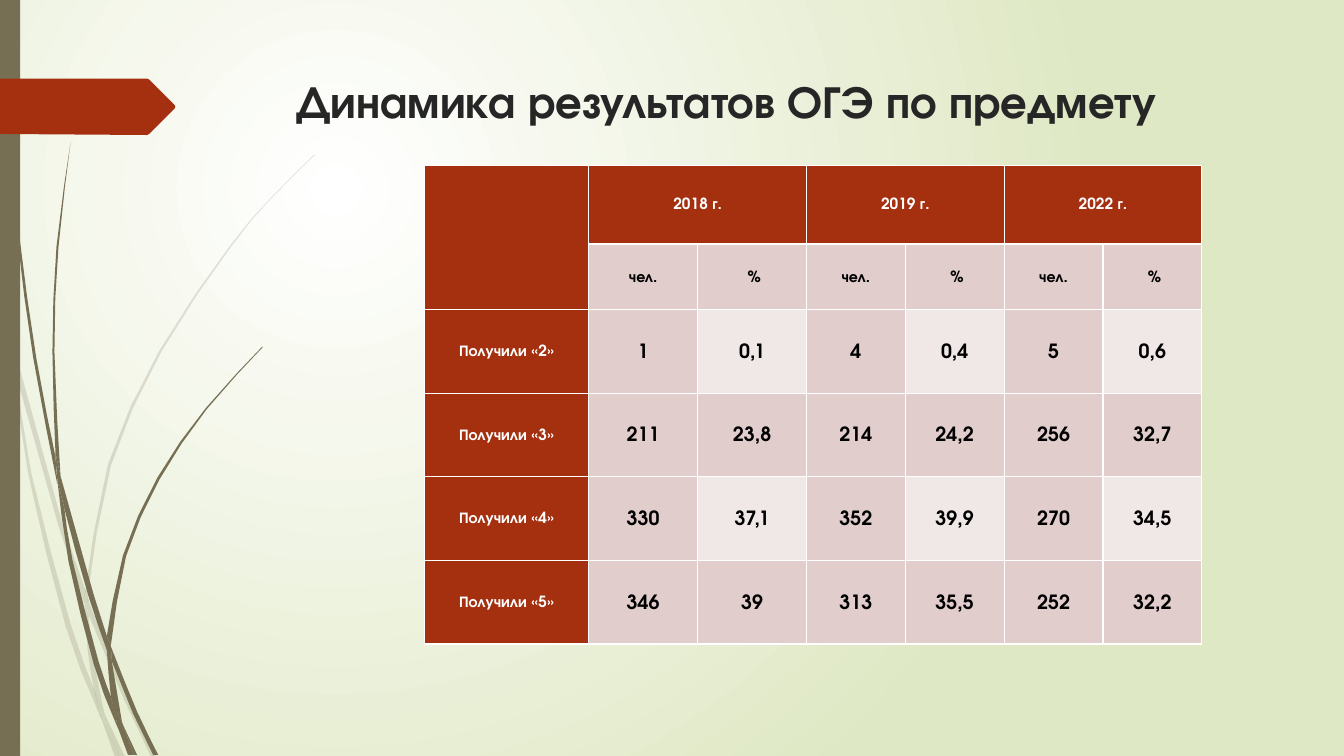
from dataclasses import dataclass

from lxml import etree
from pptx import Presentation
from pptx.dml.color import RGBColor
from pptx.enum.shapes import MSO_SHAPE
from pptx.enum.text import MSO_ANCHOR, PP_ALIGN
from pptx.oxml.ns import qn
from pptx.util import Pt

PX = 9144
SLIDE_WIDTH, SLIDE_HEIGHT = 1333, 750
TITLE_ONLY = 5
RECTANGLE = MSO_SHAPE.RECTANGLE
TOP, MIDDLE = MSO_ANCHOR.TOP, MSO_ANCHOR.MIDDLE
LEFT, CENTER = PP_ALIGN.LEFT, PP_ALIGN.CENTER
CURVE_STEPS = 2
SHORTEST_CURVE = 4


@dataclass(frozen=True)
class Theme:
    """Colours and type sizes of the slide."""
    font: str = "TeX Gyre Adventor"
    title_size: float = 32.4
    label_size: int = 11
    value_size: int = 14
    line_spacing: float = 1.15
    title: str = "262626"
    white: str = "FFFFFF"
    black: str = "000000"
    glow_edge: str = "DFE8C4"
    stem: str = "766F54"
    accent: str = "A53010"
    band: str = "E1CDCC"
    light_band: str = "F0E8E7"


THEME = Theme()

TITLE = "Динамика результатов ОГЭ по предмету"
YEARS = ["2018 г.", "2019 г.", "2022 г."]
MEASURES = ["чел.", " %"]
RESULTS = [
    ["Получили «2»", "1", "0,1", "4", "0,4", "5", "0,6"],
    ["Получили «3»", "211", "23,8", "214", "24,2", "256", "32,7"],
    ["Получили «4»", "330", "37,1", "352", "39,9", "270", "34,5"],
    ["Получили «5»", "346", "39", "313", "35,5", "252", "32,2"],
]
COLUMN_WIDTHS = [163, 108, 108, 98, 98, 98, 98]
ROW_HEIGHTS = [78, 65, 83, 83, 83, 83]

FAINT_BLADES = [
    [[(11, 350), (9, 322), (0, 282)], [(0, 299), (10, 344)]],
    [[(17, 376), (58, 522), (84, 599)], [(85, 586), (62, 520), (14, 345)]],
    [[(88, 610), (123, 694), (150, 751)], [(155, 751), (127, 692), (92, 607), (88, 596)]],
    [[(105, 711), (119, 751)], [(124, 751)]],
    [[(11, 350), (28, 470), (65, 621), (92, 693), (101, 714)],
     [(99, 707), (93, 683), (70, 619), (31, 469), (17, 376)]],
    [[(84, 599), (87, 646), (93, 683), (96, 692), (105, 711)],
     [(103, 706), (91, 646), (88, 610)]],
    [[(88, 596), (88, 584), (110, 462), (160, 349), (229, 245), (268, 198), (312, 154)],
     [(312, 153), (268, 197), (228, 244), (158, 348), (107, 461), (85, 584), (85, 586)]],
    [[(101, 714), (114, 751)], [(119, 751)]],
    [[(84, 599), (88, 608), (88, 610)], [(88, 596), (85, 586)]],
    [[(93, 683), (99, 707), (101, 714), (119, 751)], [(105, 711), (96, 692)]],
]
DARK_BLADES = [
    [[(3, 0), (7, 110), (17, 233), (33, 355), (57, 481)],
     [(55, 453), (36, 355), (19, 232), (8, 109), (4, 0)]],
    [[(60, 472), (64, 505), (88, 592), (106, 645)], [(106, 631), (93, 590)]],
    [[(111, 656), (132, 708), (152, 749)], [(157, 749), (136, 706), (113, 649), (110, 641)]],
    [[(57, 477), (68, 557), (93, 659), (111, 708), (117, 722)],
     [(116, 717), (110, 691), (98, 657), (72, 556), (64, 505)]],
    [[(60, 472), (54, 349), (58, 245), (70, 141)],
     [(70, 141), (56, 245), (52, 349), (55, 449)]],
    [[(122, 719), (133, 749)], [(136, 749)]],
    [[(55, 453), (57, 477), (64, 505)], [(60, 472), (55, 449)]],
    [[(110, 641), (111, 633), (125, 552), (158, 476), (205, 406), (261, 344)],
     [(260, 344), (204, 405), (156, 474), (122, 551), (106, 631)]],
    [[(117, 722), (127, 749)], [(131, 749)]],
    [[(106, 645), (110, 691), (116, 706), (122, 719)], [(121, 716), (111, 656), (109, 651)]],
    [[(106, 645), (109, 651), (111, 656)], [(110, 641), (106, 631)]],
    [[(110, 691), (116, 717), (117, 722), (130, 749)], [(133, 749), (122, 719), (116, 706)]],
]
MARKER = [[(0, 0), (146, 0), (148, 1)], [(173, 26), (174, 28), (173, 30)],
          [(148, 55), (146, 56), (0, 55)]]


def smooth(points):
    """Return points along a Catmull-Rom curve, leaving short edges straight."""
    if len(points) < SHORTEST_CURVE:
        return points
    padded = [points[0], *points, points[-1]]
    curve = [points[0]]
    for a, b, c, d in zip(padded, padded[1:], padded[2:], padded[3:]):
        for step in range(1, CURVE_STEPS + 1):
            t = step / CURVE_STEPS
            curve.append(tuple(
                (2 * q + (r - p) * t + (2 * p - 5 * q + 4 * r - s) * t ** 2
                 + (3 * q - p - 3 * r + s) * t ** 3) / 2
                for p, q, r, s in zip(a, b, c, d)))
    return curve


def paint(shape, color, opacity=100):
    """Give a shape a flat fill without line or shadow."""
    shape.shadow.inherit = False
    shape.line.fill.background()
    shape.fill.solid()
    shape.fill.fore_color.rgb = RGBColor.from_string(color)
    if opacity < 100:
        tint = next(shape.element.spPr.iter(qn("a:srgbClr")))
        etree.SubElement(tint, qn("a:alpha"), val=str(opacity * 1000))


def add_outline(shapes, box, edges, color, opacity=100):
    """Draw one closed outline made of smoothed edges."""
    left, top = box[:2]
    points = [((left + x) * PX, (top + y) * PX) for edge in edges for x, y in smooth(edge)]
    builder = shapes.build_freeform(*points[0], scale=1.0)
    builder.add_line_segments(points[1:], close=True)
    paint(builder.convert_to_shape(), color, opacity)


def add_background(slide):
    """Fill the slide with a round glow centred in the upper left quarter."""
    fill = slide.background.fill
    fill.gradient()
    for stop, color in zip(fill.gradient_stops, (THEME.white, THEME.glow_edge)):
        stop.color.rgb = RGBColor.from_string(color)
    gradient = next(slide.element.iter(qn("a:gradFill")))
    gradient.remove(gradient.find(qn("a:lin")))
    glow = etree.SubElement(gradient, qn("a:path"), path="circle")
    etree.SubElement(glow, qn("a:fillToRect"), l="50000", t="50000", r="100000", b="100000")


def add_decoration(slide, box):
    """Draw the grass, the side bar and the marker on the left edge."""
    left, top, width, height = box
    for blades, opacity in ((FAINT_BLADES, 20), (DARK_BLADES, 100)):
        group = slide.shapes.add_group_shape()
        for edges in blades:
            add_outline(group.shapes, box, edges, THEME.stem, opacity)
    bar = slide.shapes.add_shape(RECTANGLE, left * PX, top * PX, width * PX, height * PX)
    paint(bar, THEME.stem)
    add_outline(slide.shapes, (left, top + 78), MARKER, THEME.accent)


def write(text_frame, text, size, color, alignment):
    """Put one bold paragraph into a text frame."""
    paragraph = text_frame.paragraphs[0]
    paragraph.text = text
    paragraph.alignment = alignment
    for run in paragraph.runs:
        run.font.name, run.font.size, run.font.bold = THEME.font, Pt(size), True
        run.font.color.rgb = RGBColor.from_string(color)


def add_title(slide, box):
    """Place and format the title placeholder."""
    title = slide.shapes.title
    title.left, title.top, title.width, title.height = (length * PX for length in box)
    title.text_frame.word_wrap = True
    title.text_frame.vertical_anchor = TOP
    write(title.text_frame, TITLE, THEME.title_size, THEME.title, LEFT)


def format_cell(cell, row, column, text):
    """Write and fill one cell by its place in the table."""
    is_header = row == 0 or column == 0
    is_light = row > 1 and row % 2 == 0 and column % 2 == 0
    color = THEME.accent if is_header else THEME.light_band if is_light else THEME.band
    cell.fill.solid()
    cell.fill.fore_color.rgb = RGBColor.from_string(color)
    if text:
        size = THEME.value_size if row > 1 and column > 0 else THEME.label_size
        write(cell.text_frame, text, size, THEME.white if is_header else THEME.black, CENTER)
        cell.text_frame.paragraphs[0].line_spacing = THEME.line_spacing
        cell.vertical_anchor = MIDDLE
        cell.margin_left = cell.margin_right = 7 * PX
        cell.margin_top = cell.margin_bottom = 0


def add_results(slide, box):
    """Build the table of results by year."""
    years = [text for year in YEARS for text in (year, "")]
    rows = [["", *years], ["", *MEASURES * len(YEARS)], *RESULTS]
    frame = slide.shapes.add_table(len(rows), len(rows[0]), *(length * PX for length in box))
    table = frame.table
    for column, width in zip(table.columns, COLUMN_WIDTHS):
        column.width = width * PX
    for row, height in zip(table.rows, ROW_HEIGHTS):
        row.height = height * PX
    for row, texts in enumerate(rows):
        for column, text in enumerate(texts):
            format_cell(table.cell(row, column), row, column, text)
    table.cell(0, 0).merge(table.cell(1, 0))
    for column in range(1, len(years), len(MEASURES)):
        table.cell(0, column).merge(table.cell(0, column + 1))


def main():
    """Build and save the presentation."""
    presentation = Presentation()
    presentation.slide_width, presentation.slide_height = SLIDE_WIDTH * PX, SLIDE_HEIGHT * PX
    slide = presentation.slides.add_slide(presentation.slide_layouts[TITLE_ONLY])
    add_background(slide)
    add_decoration(slide, (0, 0, 20, SLIDE_HEIGHT))
    add_title(slide, (284, 68, 975, 140))
    add_results(slide, (421, 164, sum(COLUMN_WIDTHS), sum(ROW_HEIGHTS)))
    presentation.save("out.pptx")


if __name__ == "__main__":
    main()
